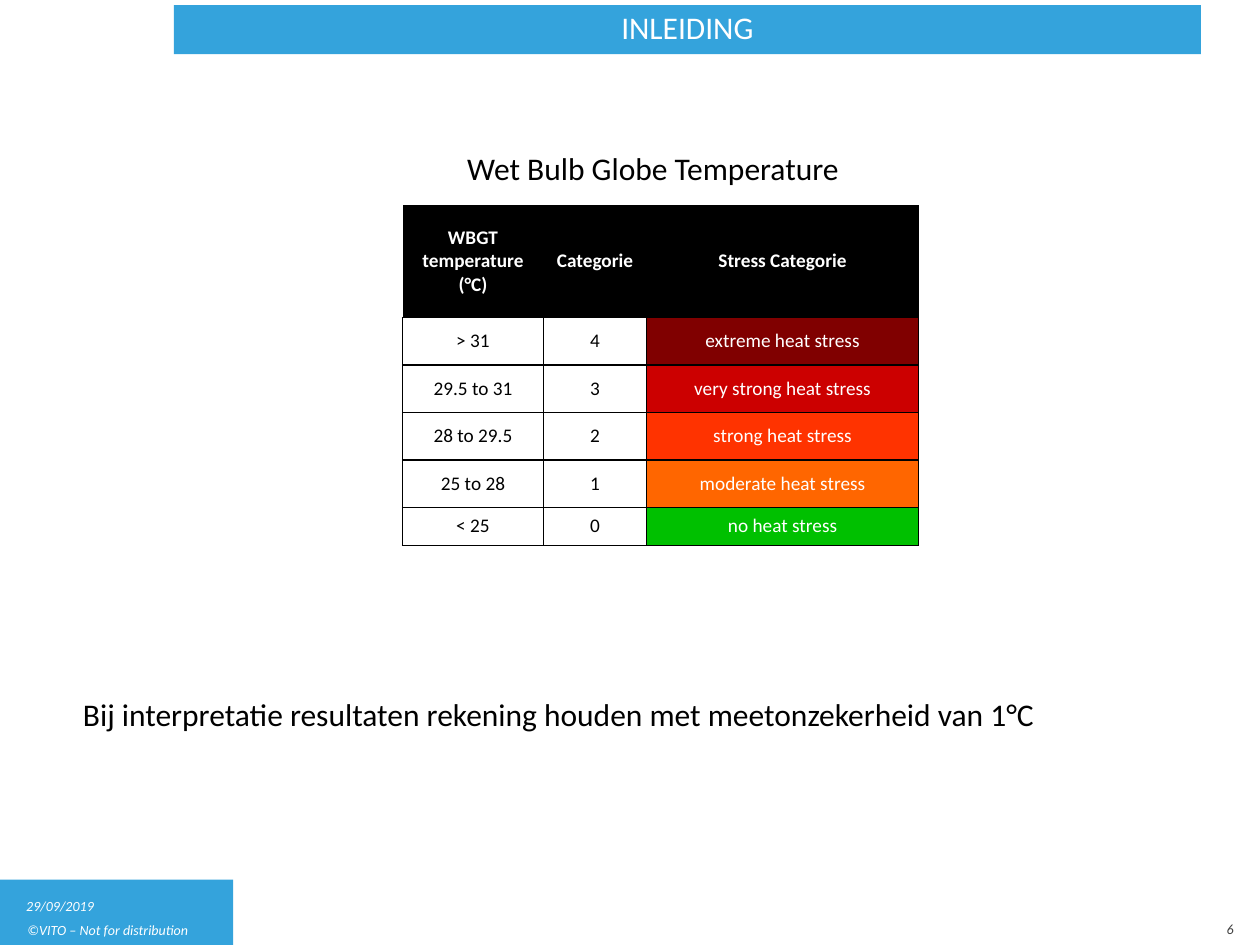
"""Build the Wet Bulb Globe Temperature slide."""
from dataclasses import dataclass
from typing import Any

import pptx
import pptx.dml.color
import pptx.enum.shapes
import pptx.enum.text
import pptx.oxml
import pptx.oxml.ns
import pptx.util

Pt = pptx.util.Pt
RGBColor = pptx.dml.color.RGBColor
Align = pptx.enum.text.PP_ALIGN
Anchor = pptx.enum.text.MSO_ANCHOR


@dataclass(frozen=True)
class Theme:
    font: str = "Calibri"
    blue: str = "34A3DC"
    white: str = "FFFFFF"
    black: str = "000000"
    grey: str = "404040"
    footer_size: float = 8
    table_size: float = 11
    text_size: float = 18


@dataclass(frozen=True)
class Area:
    left: float
    top: float
    width: float
    height: float

    def lengths(self) -> tuple:
        return tuple(Pt(value) for value in (self.left, self.top, self.width, self.height))


@dataclass(frozen=True)
class Label:
    text: str
    area: Area
    size: float
    color: str
    italic: bool = False
    align: Any = Align.LEFT
    anchor: Any = Anchor.TOP
    wrap: bool = True


@dataclass(frozen=True)
class StressLevel:
    temperature: str
    category: str
    stress: str
    fill: str


THEME = Theme()
BANNER = Area(99.4, 2.9, 586.8, 28.1)
FOOTER = Area(0, 502.6, 133.2, 37.4)
TABLE = Area(230, 117, 295, 194.6)
COLUMN_WIDTHS = (80.6, 58.9, 155.5)
ROW_HEIGHTS = (64.5, 27.1, 27.1, 27.1, 27.1, 21.7)
HEADINGS = ("WBGT temperature (°C)", "Categorie", "Stress Categorie")
LEVELS = (
    StressLevel("> 31", "4", "extreme heat stress", "800000"),
    StressLevel("29.5 to 31", "3", "very strong heat stress", "CC0000"),
    StressLevel("28 to 29.5", "2", "strong heat stress", "FF3300"),
    StressLevel("25 to 28", "1", "moderate heat stress", "FF6600"),
    StressLevel("< 25", "0", "no heat stress", "00C000"),
)
FOOTER_STYLE = {"size": THEME.footer_size, "italic": True, "anchor": Anchor.MIDDLE}
TEXT_STYLE = {"size": THEME.text_size, "color": THEME.black, "wrap": False}
LABELS = (
    Label("29/09/2019", Area(7.9, 508.3, 69.1, 18.7), color=THEME.white, **FOOTER_STYLE),
    Label("©VITO – Not for distribution", Area(8.6, 522, 174.2, 18.7),
          color=THEME.white, **FOOTER_STYLE),
    Label("6", Area(671.8, 521.3, 40.3, 18.7), color=THEME.grey,
          align=Align.RIGHT, **FOOTER_STYLE),
    Label("Wet Bulb Globe Temperature", Area(259.9, 81.4, 234, 29), **TEXT_STYLE),
    Label("Bij interpretatie resultaten rekening houden met meetonzekerheid van 1°C",
          Area(40.3, 393.8, 565.2, 29), **TEXT_STYLE),
)


def apply(target: Any, values: dict) -> None:
    """Set each named value on the target."""
    for name, value in values.items():
        setattr(target, name, value)


def write(frame: Any, text: str, size: float, color: str, align: Any, **style: bool) -> Any:
    """Write one formatted paragraph and return it."""
    para = frame.paragraphs[0]
    para.alignment = align
    span = para.add_run()
    span.text = text
    apply(span.font, {"name": THEME.font, "size": Pt(size), **style})
    span.font.color.rgb = RGBColor.from_string(color)
    return para


def add_block(slide: Any, area: Area) -> Any:
    """Add a plain blue rectangle."""
    block = slide.shapes.add_shape(pptx.enum.shapes.MSO_SHAPE.RECTANGLE, *area.lengths())
    block.shadow.inherit = False
    block.fill.solid()
    block.fill.fore_color.rgb = RGBColor.from_string(THEME.blue)
    block.line.fill.background()
    return block


def add_banner(slide: Any) -> None:
    """Add the title banner."""
    frame = add_block(slide, BANNER).text_frame
    apply(frame, {"word_wrap": True, "vertical_anchor": Anchor.MIDDLE,
                  "margin_left": Pt(8.6), "margin_right": Pt(8.6),
                  "margin_top": Pt(6.5), "margin_bottom": Pt(4.3)})
    para = write(frame, "INLEIDING", THEME.text_size, THEME.white, Align.CENTER)
    para.line_spacing = Pt(16)


def add_label(slide: Any, label: Label) -> None:
    """Add a text box holding one label."""
    frame = slide.shapes.add_textbox(*label.area.lengths()).text_frame
    apply(frame, {"word_wrap": label.wrap, "vertical_anchor": label.anchor})
    write(frame, label.text, label.size, label.color, label.align, italic=label.italic)


def set_borders(cell: Any, visible: str) -> None:
    """Draw black borders on the visible sides and none on the others."""
    properties = cell._tc.get_or_add_tcPr()
    for index, side in enumerate("LRTB"):
        paint = (f'<a:solidFill><a:srgbClr val="{THEME.black}"/></a:solidFill>'
                 if side in visible else "<a:noFill/>")
        properties.insert(index, pptx.oxml.parse_xml(
            f'<a:ln{side} {pptx.oxml.ns.nsdecls("a")} w="{Pt(1)}">{paint}</a:ln{side}>'))


def fill_cell(cell: Any, text: str, fill: str, color: str, borders: str, bold: bool) -> None:
    """Write and format one table cell."""
    apply(cell, {"vertical_anchor": Anchor.MIDDLE, "margin_left": Pt(5), "margin_right": Pt(5),
                 "margin_top": 0, "margin_bottom": 0})
    cell.fill.solid()
    cell.fill.fore_color.rgb = RGBColor.from_string(fill)
    write(cell.text_frame, text, THEME.table_size, color, Align.CENTER, bold=bold)
    set_borders(cell, borders)


def add_stress_table(slide: Any) -> None:
    """Add the table of heat stress categories."""
    table = slide.shapes.add_table(len(ROW_HEIGHTS), len(COLUMN_WIDTHS), *TABLE.lengths()).table
    apply(table, {"first_row": True, "horz_banding": False})
    for column, width in zip(table.columns, COLUMN_WIDTHS):
        column.width = Pt(width)
    for row, height in zip(table.rows, ROW_HEIGHTS):
        row.height = Pt(height)
    for index, heading in enumerate(HEADINGS):
        fill_cell(table.cell(0, index), heading, THEME.black, THEME.white, "B", True)
    for row_index, level in enumerate(LEVELS, start=1):
        entries = ((level.temperature, THEME.white, THEME.black),
                   (level.category, THEME.white, THEME.black),
                   (level.stress, level.fill, THEME.white))
        for index, (text, fill, color) in enumerate(entries):
            fill_cell(table.cell(row_index, index), text, fill, color, "LRTB", False)


def main() -> None:
    """Build and save the deck."""
    deck = pptx.Presentation()
    apply(deck, {"slide_width": Pt(720), "slide_height": Pt(540)})
    slide = deck.slides.add_slide(deck.slide_layouts[6])
    add_block(slide, FOOTER)
    add_banner(slide)
    add_stress_table(slide)
    for label in LABELS:
        add_label(slide, label)
    deck.save("out.pptx")


if __name__ == "__main__":
    main()
